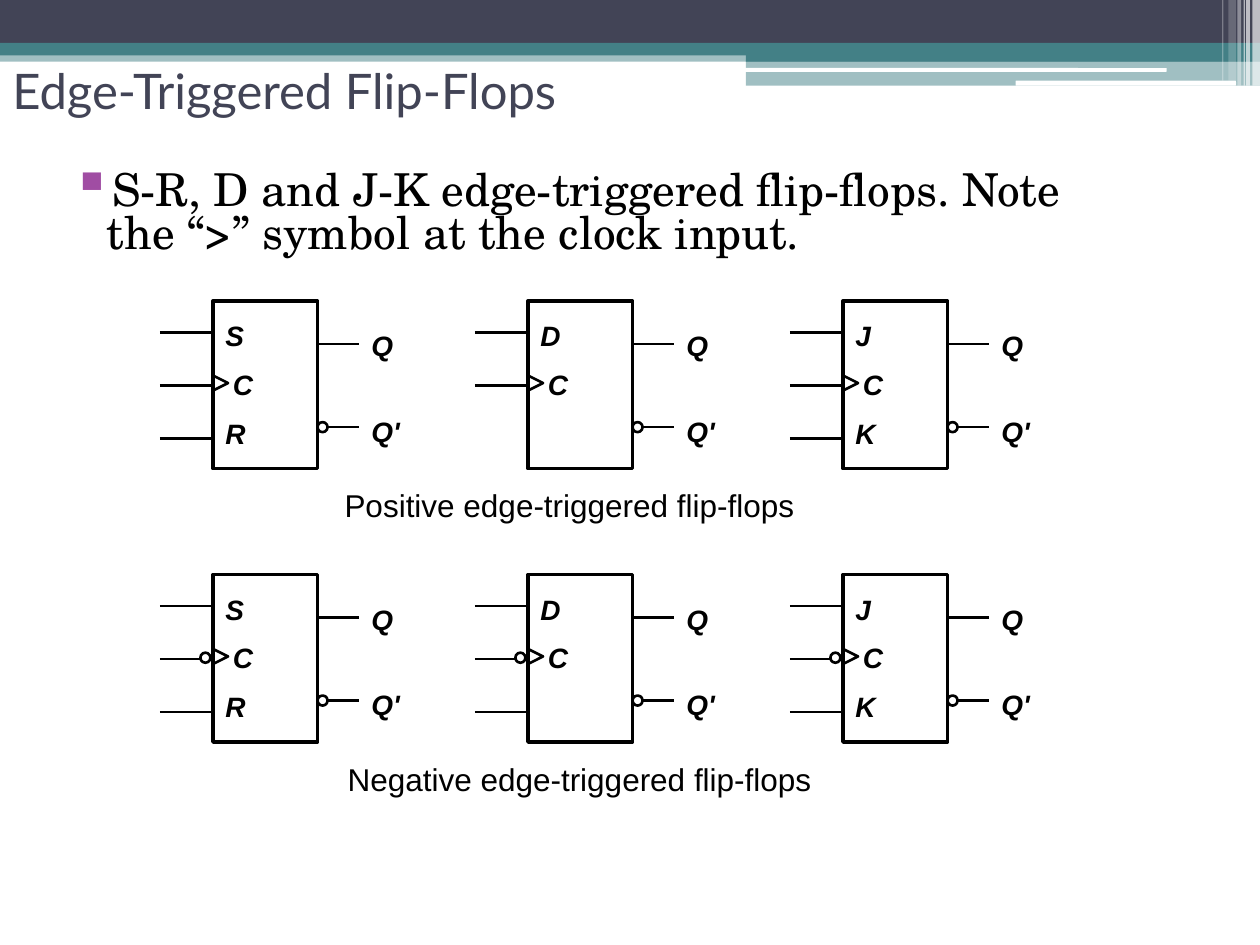
from dataclasses import dataclass

from lxml.etree import SubElement
from pptx import Presentation
from pptx.dml.color import RGBColor
from pptx.enum.shapes import MSO_CONNECTOR, MSO_SHAPE
from pptx.enum.text import MSO_ANCHOR, PP_ALIGN
from pptx.oxml.ns import qn
from pptx.util import Inches, Pt


@dataclass(frozen=True)
class Theme:
    navy: str = "424456"
    teal: str = "438086"
    white: str = "FFFFFF"
    black: str = "000000"
    purple: str = "A04DA3"
    title_font: str = "Lato"
    body_font: str = "TeX Gyre Schola"
    label_font: str = "Arial"
    title_size: float = 28
    body_size: float = 25.9
    caption_size: float = 18
    label_size: float = 16
    box_line: float = 2
    wire_line: float = 1.5


class FlipFlopSlide:
    def __init__(self, slide, theme):
        self.slide = slide
        self.theme = theme
        self.shapes = slide.shapes

    def band(self, left, top, width, height, color, opacity=100, kind=MSO_SHAPE.RECTANGLE):
        shape = self.shapes.add_shape(kind, Inches(left), Inches(top), Inches(width), Inches(height))
        shape.shadow.inherit = False
        shape.line.fill.background()
        shape.fill.solid()
        shape.fill.fore_color.rgb = RGBColor.from_string(color)
        if opacity < 100:
            color_element = shape.fill._xPr.find(".//" + qn("a:srgbClr"))
            SubElement(color_element, qn("a:alpha")).set("val", str(opacity * 1000))

    def outline(self, kind, left, top, width, height, weight, rotation=0):
        shape = self.shapes.add_shape(kind, Inches(left), Inches(top), Inches(width), Inches(height))
        shape.shadow.inherit = False
        shape.fill.background()
        shape.line.color.rgb = RGBColor.from_string(self.theme.black)
        shape.line.width = Pt(weight)
        shape.rotation = rotation

    def wire(self, start, end, y):
        connector = self.shapes.add_connector(
            MSO_CONNECTOR.STRAIGHT, Inches(start), Inches(y), Inches(end), Inches(y))
        connector.line.color.rgb = RGBColor.from_string(self.theme.black)
        connector.line.width = Pt(self.theme.wire_line)
        SubElement(connector._element.spPr, qn("a:effectLst"))

    def bubble(self, left, top):
        self.outline(MSO_SHAPE.OVAL, left, top, 0.08, 0.08, self.theme.wire_line)

    def text(self, left, top, width, height, lines, font, size, color,
             emphasis=False, align=PP_ALIGN.LEFT, anchor=MSO_ANCHOR.TOP, gap=0):
        box = self.shapes.add_textbox(Inches(left), Inches(top), Inches(width), Inches(height))
        frame = box.text_frame
        frame.word_wrap = True
        frame.vertical_anchor = anchor
        for index, line in enumerate(lines):
            paragraph = frame.add_paragraph() if index else frame.paragraphs[0]
            paragraph.alignment = align
            if index:
                paragraph.space_before = Pt(gap)
            run = paragraph.add_run()
            run.text = line
            run.font.name = font
            run.font.size = Pt(size)
            run.font.bold = run.font.italic = emphasis
            run.font.color.rgb = RGBColor.from_string(color)
        return frame.paragraphs

    def bullet(self, left, top, width, height, line):
        theme = self.theme
        paragraph = self.text(left, top, width, height, [line],
                              theme.body_font, theme.body_size, theme.black)[0]
        paragraph.line_spacing = 0.8
        properties = paragraph._p.get_or_add_pPr()
        properties.set("marL", str(Inches(0.4)))
        properties.set("indent", str(Inches(-0.28)))
        bullet_color = SubElement(properties, qn("a:buClr"))
        SubElement(bullet_color, qn("a:srgbClr")).set("val", theme.purple)
        SubElement(properties, qn("a:buSzPct")).set("val", "120000")
        SubElement(properties, qn("a:buChar")).set("char", "▪")

    def labels(self, left, top, width, height, lines, gap):
        theme = self.theme
        return self.text(left, top, width, height, lines, theme.label_font,
                         theme.label_size, theme.black, emphasis=True, gap=gap)

    def flip_flop(self, left, top, inputs, negative, wired_inputs):
        self.shapes = self.slide.shapes.add_group_shape().shapes
        right = left + 0.83
        weight = self.theme.wire_line
        self.outline(MSO_SHAPE.RECTANGLE, left, top, 0.83, 1.33, self.theme.box_line)
        for index in range(wired_inputs):
            inverted_clock = negative and index == 1
            end = left - 0.09 if inverted_clock else left
            self.wire(left - 0.42, end, top + 0.25 + 0.42 * index)
        self.outline(MSO_SHAPE.ISOSCELES_TRIANGLE, left, top + 0.59, 0.12, 0.12, weight, rotation=90)
        if negative:
            self.bubble(left - 0.1, top + 0.62)
        self.wire(right, right + 0.33, top + 0.34)
        self.bubble(right, top + 0.96)
        self.wire(right + 0.08, right + 0.33, top + 1)
        height = 0.37 + 0.4 * (len(inputs) - 1)
        paragraphs = self.labels(left, top + 0.09, 0.58, height, inputs, gap=8.8)
        paragraphs[1]._p.get_or_add_pPr().set("marL", str(Inches(0.06)))
        self.labels(right + 0.33, top + 0.17, 0.5, 1.06, ["Q", "Q'"], gap=29.6)
        self.shapes = self.slide.shapes

    def caption(self, left, top, line):
        theme = self.theme
        self.text(left, top, 4, 0.4, [line], theme.label_font, theme.caption_size,
                  theme.black, align=PP_ALIGN.CENTER)

    def header(self):
        theme = self.theme
        self.band(0, 0.4, 10, 0.09, theme.teal, 50)
        self.band(0, 0, 10, 0.34, theme.navy)
        self.band(0, 0.34, 10, 0.1, theme.teal)
        self.band(5.92, 0.39, 4.08, 0.1, theme.teal)
        self.band(5.92, 0.48, 4.08, 0.2, theme.teal, 50)
        self.band(5.91, 0.54, 3.35, 0.03, theme.white, kind=MSO_SHAPE.ROUNDED_RECTANGLE)
        self.band(8.06, 0.64, 1.75, 0.04, theme.white, kind=MSO_SHAPE.ROUNDED_RECTANGLE)
        stripes = [(9.94, 0.06, 0.68, 65), (9.89, 0.03, 0.68, 65), (9.87, 0.01, 0.68, 60),
                   (9.82, 0.03, 0.68, 40), (9.75, 0.06, 0.64, 20), (9.7, 0.01, 0.64, 30)]
        for left, width, height, opacity in stripes:
            self.band(left, 0, width, height, theme.white, opacity)

    def title(self, line):
        theme = self.theme
        self.text(0, 0.44, 9, 0.55, [line], theme.title_font, theme.title_size,
                  theme.navy, anchor=MSO_ANCHOR.MIDDLE)


def main():
    presentation = Presentation()
    presentation.slide_width = Inches(10)
    presentation.slide_height = Inches(7.5)
    slide = presentation.slides.add_slide(presentation.slide_layouts[6])
    page = FlipFlopSlide(slide, Theme())

    page.header()
    page.title("Edge-Triggered Flip-Flops")
    page.bullet(0.35, 1.31, 8.42, 0.83,
                "S-R, D and J-K edge-triggered flip-flops. Note the “>” symbol at the clock input.")

    flip_flops = [["S", "C", "R"], ["D", "C"], ["J", "C", "K"]]
    rows = [("Positive", 2.39, 2.52), ("Negative", 4.56, 2.6)]
    for edge, top, caption_left in rows:
        negative = edge == "Negative"
        for column, inputs in enumerate(flip_flops):
            wired_inputs = 3 if negative else len(inputs)
            page.flip_flop(1.69 + 2.5 * column, top, inputs, negative, wired_inputs)
        page.caption(caption_left, top + 1.42, f"{edge} edge-triggered flip-flops")

    presentation.save("out.pptx")


if __name__ == "__main__":
    main()
